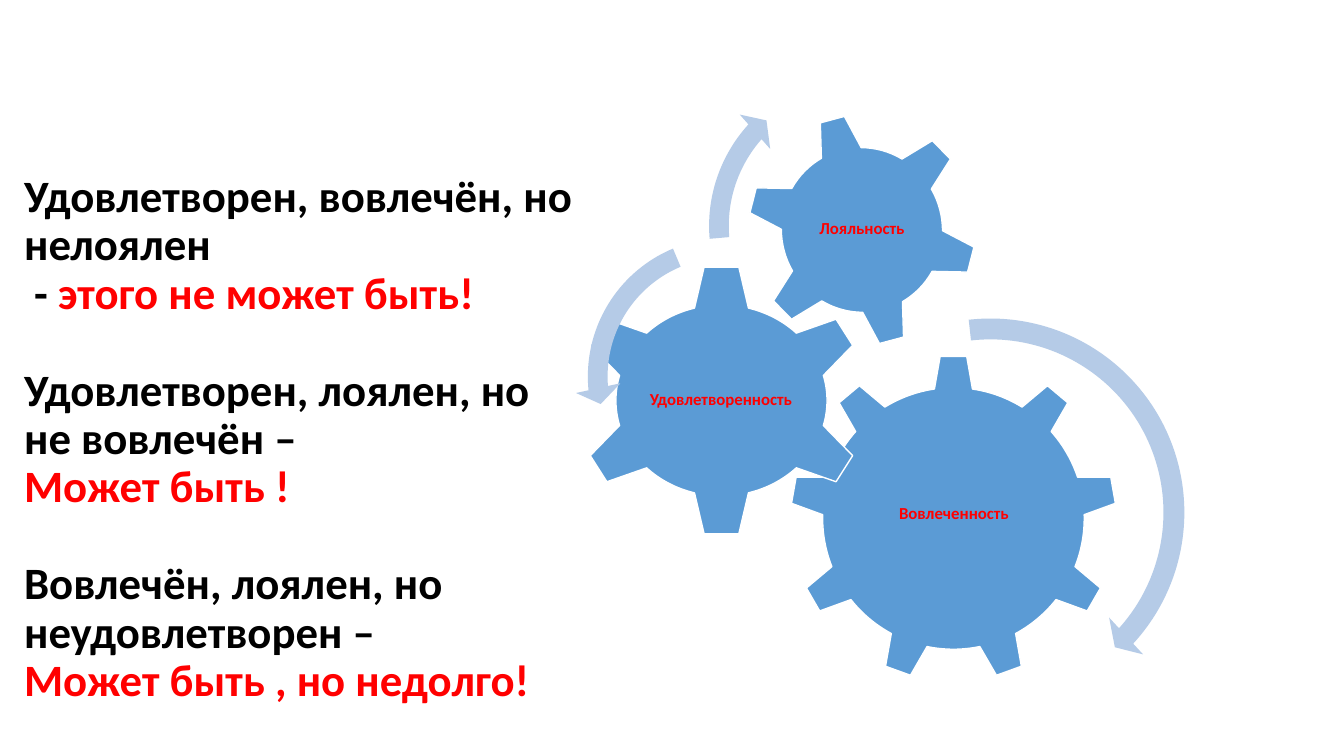
from pptx import Presentation
from pptx.dml.color import RGBColor
from pptx.enum.shapes import MSO_SHAPE
from pptx.enum.text import MSO_ANCHOR, MSO_AUTO_SIZE, PP_ALIGN
from pptx.util import Pt

SCALE = 12192000 / 1344
RED = "FF0000"


def px(*values):
    return [round(v * SCALE) for v in values]


def color(fmt, value):
    fmt.rgb = RGBColor.from_string(value)


prs = Presentation()
prs.slide_width, prs.slide_height = px(1344, 756)
s = prs.slides.add_slide(prs.slide_layouts[5])

title = s.shapes.title
title.left, title.top, title.width, title.height = px(14, 114, 570, 652)
tf = title.text_frame
tf.word_wrap = True
tf.auto_size = MSO_AUTO_SIZE.NONE
tf.vertical_anchor = MSO_ANCHOR.MIDDLE
p = tf.paragraphs[0]
p.alignment = PP_ALIGN.LEFT
p.line_spacing = 0.9
p.font.size = Pt(32)
p.font.bold = True
p.font.name = "Calibri"

statements = [
    ("Удовлетворен, вовлечён, но нелоялен", "000000", 1),
    (" - ", "000000", 0),
    ("этого не может быть!", RED, 2),
    ("Удовлетворен, лоялен, но не вовлечён – ", "000000", 1),
    ("Может быть !", RED, 2),
    ("Вовлечён, лоялен, но неудовлетворен –", "000000", 1),
    ("Может быть , но недолго!", RED, 0),
]
for text, ink, breaks in statements:
    r = p.add_run()
    r.text = text
    r.font.size = Pt(32)
    r.font.bold = True
    r.font.name = "Calibri"
    color(r.font.color, ink)
    for _ in range(breaks):
        p.add_line_break()

gears = [
    ("Вовлеченность", MSO_SHAPE.GEAR_9, (790, 355, 327, 327), 0, (856, 431, 196, 167)),
    ("Удовлетворенность", MSO_SHAPE.GEAR_6, (575, 264, 293, 273), 0, (646, 333, 150, 135)),
    ("Лояльность", MSO_SHAPE.GEAR_6, (747, 113, 230, 234), 345, (797, 164, 130, 131)),
]
for name, kind, gear_box, rotation, label_box in gears:
    sp = s.shapes.add_shape(kind, *px(*gear_box))
    sp.rotation = rotation
    sp.shadow.inherit = False
    sp.fill.solid()
    color(sp.fill.fore_color, "5B9BD5")
    color(sp.line.color, "FFFFFF")
    sp.line.width = Pt(1)

    tf = s.shapes.add_textbox(*px(*label_box)).text_frame
    tf.word_wrap = True
    tf.vertical_anchor = MSO_ANCHOR.MIDDLE
    tf.margin_left, tf.margin_top, tf.margin_right, tf.margin_bottom = px(2, 2, 2, 2)
    p = tf.paragraphs[0]
    p.alignment = PP_ALIGN.CENTER
    p.line_spacing = 0.9
    r = p.add_run()
    r.text = name
    r.font.size = Pt(12)
    r.font.bold = True
    r.font.name = "Calibri"
    color(r.font.color, RED)

arrows = [
    (MSO_SHAPE.CIRCULAR_ARROW, (782, 304, 417), (0.05, 2.99, 25.39, 158.14, 0.06)),
    (MSO_SHAPE.LEFT_CIRCULAR_ARROW, (575, 225, 303), (0.065, 4.3, 104.89, 148.38, 0.075)),
    (MSO_SHAPE.CIRCULAR_ARROW, (696, 62, 328), (0.06, 3.94, 133.14, 105.08, 0.07)),
]
for kind, (left, top, size), adjustments in arrows:
    sp = s.shapes.add_shape(kind, *px(left, top, size, size))
    for i, value in enumerate(adjustments):
        sp.adjustments[i] = value
    sp.shadow.inherit = False
    sp.fill.solid()
    color(sp.fill.fore_color, "B5CBE7")
    sp.line.fill.background()

prs.save("out.pptx")
